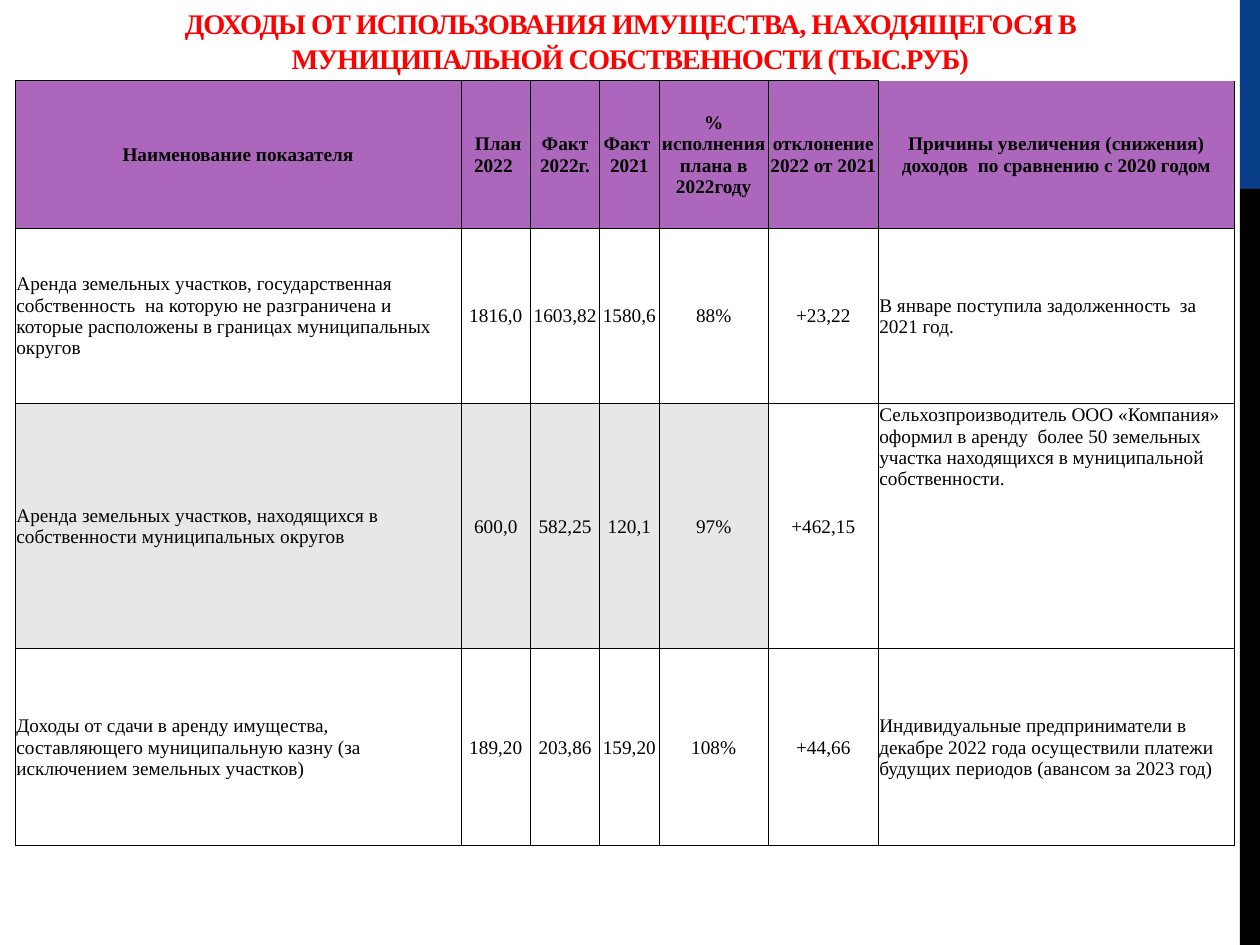
from dataclasses import dataclass

from lxml import etree
from pptx import Presentation
from pptx.dml.color import RGBColor
from pptx.enum.shapes import MSO_SHAPE
from pptx.enum.text import MSO_ANCHOR, MSO_AUTO_SIZE, PP_ALIGN
from pptx.oxml.ns import qn
from pptx.util import Inches, Pt

RECTANGLE = MSO_SHAPE.RECTANGLE
TOP, MIDDLE, BOTTOM = MSO_ANCHOR.TOP, MSO_ANCHOR.MIDDLE, MSO_ANCHOR.BOTTOM
LEFT, CENTER = PP_ALIGN.LEFT, PP_ALIGN.CENTER

BLACK = RGBColor(0x00, 0x00, 0x00)
BLUE = RGBColor(0x07, 0x3E, 0x87)
RED = RGBColor(0xFF, 0x00, 0x00)
PURPLE = RGBColor(0xAC, 0x66, 0xBB)
WHITE = RGBColor(0xFF, 0xFF, 0xFF)
GRAY = RGBColor(0xE7, 0xE7, 0xE7)

FONT = "Times New Roman"
TITLE = ("ДОХОДЫ ОТ ИСПОЛЬЗОВАНИЯ ИМУЩЕСТВА, НАХОДЯЩЕГОСЯ В "
         "МУНИЦИПАЛЬНОЙ СОБСТВЕННОСТИ (ТЫС.РУБ)")
COLUMN_WIDTHS = (3.54, 0.55, 0.55, 0.47, 0.87, 0.87, 2.83)
FILLED_COLUMNS = 5  # body cells to the right of these stay transparent
TEXT_COLUMNS = (0, 6)


@dataclass
class SideBar:
    top: float
    height: float
    color: RGBColor


@dataclass
class IncomeRow:
    height: float
    fill: RGBColor
    texts: tuple
    is_header: bool = False
    reason_anchor: MSO_ANCHOR = MIDDLE


SIDE_BARS = (SideBar(0, 1.5, BLUE), SideBar(1.5, 6, BLACK))

ROWS = (
    IncomeRow(1.17, PURPLE, (
        "Наименование показателя", " План 2022 ", "Факт 2022г.", "Факт  2021",
        "% исполнения плана в 2022году", "отклонение 2022 от 2021 ",
        "Причины увеличения (снижения) доходов  по сравнению с 2020 годом",
    ), is_header=True),
    IncomeRow(1.39, WHITE, (
        "Аренда земельных участков, государственная собственность  на которую "
        "не разграничена и которые расположены в границах муниципальных округов",
        "1816,0", "1603,82", "1580,6", "88%", "+23,22",
        "В январе поступила задолженность  за 2021 год.",
    )),
    IncomeRow(1.95, GRAY, (
        "Аренда земельных участков, находящихся в собственности "
        "муниципальных округов",
        "600,0", "582,25", "120,1", "97%", "+462,15",
        "Сельхозпроизводитель ООО «Компания» оформил в аренду  более 50 земельных  "
        "участка находящихся в муниципальной собственности.",
    ), reason_anchor=TOP),
    IncomeRow(1.56, WHITE, (
        "Доходы от сдачи в аренду имущества, составляющего муниципальную казну "
        "(за исключением земельных участков)",
        "189,20", "203,86", "159,20", "108%", "+44,66",
        "Индивидуальные предприниматели в декабре 2022 года осуществили платежи "
        "будущих периодов (авансом за 2023 год)",
    )),
)


def add_run(paragraph, text: str, size: float, color: RGBColor, bold: bool):
    run = paragraph.add_run()
    run.text = text
    run.font.name = FONT
    run.font.size = Pt(size)
    run.font.bold = bold
    run.font.color.rgb = color
    return run


def add_side_bar(slide, bar: SideBar) -> None:
    shape = slide.shapes.add_shape(
        RECTANGLE, Inches(9.84), Inches(bar.top), Inches(0.16), Inches(bar.height))
    shape.shadow.inherit = False
    shape.fill.solid()
    shape.fill.fore_color.rgb = bar.color
    shape.line.fill.background()


def set_borders(cell, has_top: bool) -> None:
    properties = cell._tc.get_or_add_tcPr()
    for side in ("L", "R", "T", "B"):
        line = etree.SubElement(properties, qn(f"a:ln{side}"), w=str(Pt(0.5)))
        if side == "T" and not has_top:
            etree.SubElement(line, qn("a:noFill"))
        else:
            fill = etree.SubElement(line, qn("a:solidFill"))
            etree.SubElement(fill, qn("a:srgbClr"), val=str(BLACK))


def fill_cell(cell, row: IncomeRow, column: int) -> None:
    is_last = column == len(COLUMN_WIDTHS) - 1
    set_borders(cell, has_top=not (row.is_header and is_last))
    if row.is_header or column < FILLED_COLUMNS:
        cell.fill.solid()
        cell.fill.fore_color.rgb = row.fill
    else:
        cell.fill.background()
    cell.margin_left = cell.margin_right = cell.margin_top = Inches(0.01)
    cell.margin_bottom = 0
    cell.vertical_anchor = row.reason_anchor if is_last else MIDDLE
    paragraph = cell.text_frame.paragraphs[0]
    is_text = column in TEXT_COLUMNS and not row.is_header
    paragraph.alignment = LEFT if is_text else CENTER
    add_run(paragraph, row.texts[column], 11, BLACK, row.is_header)


def add_income_table(slide) -> None:
    table = slide.shapes.add_table(
        len(ROWS), len(COLUMN_WIDTHS), Inches(0.12), Inches(0.64),
        Inches(sum(COLUMN_WIDTHS)), Inches(sum(row.height for row in ROWS))).table
    table.first_row = False
    table.horz_banding = False
    for column, width in enumerate(COLUMN_WIDTHS):
        table.columns[column].width = Inches(width)
    for index, row in enumerate(ROWS):
        table.rows[index].height = Inches(row.height)
        for column in range(len(COLUMN_WIDTHS)):
            fill_cell(table.cell(index, column), row, column)


def format_title(slide) -> None:
    title = slide.shapes.title
    title.left, title.top = Inches(0.31), Inches(0.03)
    title.width, title.height = Inches(9.38), Inches(0.62)
    frame = title.text_frame
    frame.word_wrap = True
    frame.auto_size = MSO_AUTO_SIZE.NONE
    frame.vertical_anchor = BOTTOM
    paragraph = frame.paragraphs[0]
    paragraph.alignment = CENTER
    paragraph.line_spacing = 1.05
    run = add_run(paragraph, TITLE, 16.2, RED, True)
    run.font._element.set("spc", "-60")  # letter spacing, 1/100 pt


def main() -> None:
    presentation = Presentation()
    presentation.slide_width = Inches(10)
    presentation.slide_height = Inches(7.5)
    title_only = presentation.slide_layouts[5]
    slide = presentation.slides.add_slide(title_only)

    # Side bars at the right edge
    for bar in SIDE_BARS:
        add_side_bar(slide, bar)

    # Income table and heading
    add_income_table(slide)
    format_title(slide)

    presentation.save("out.pptx")


if __name__ == "__main__":
    main()
